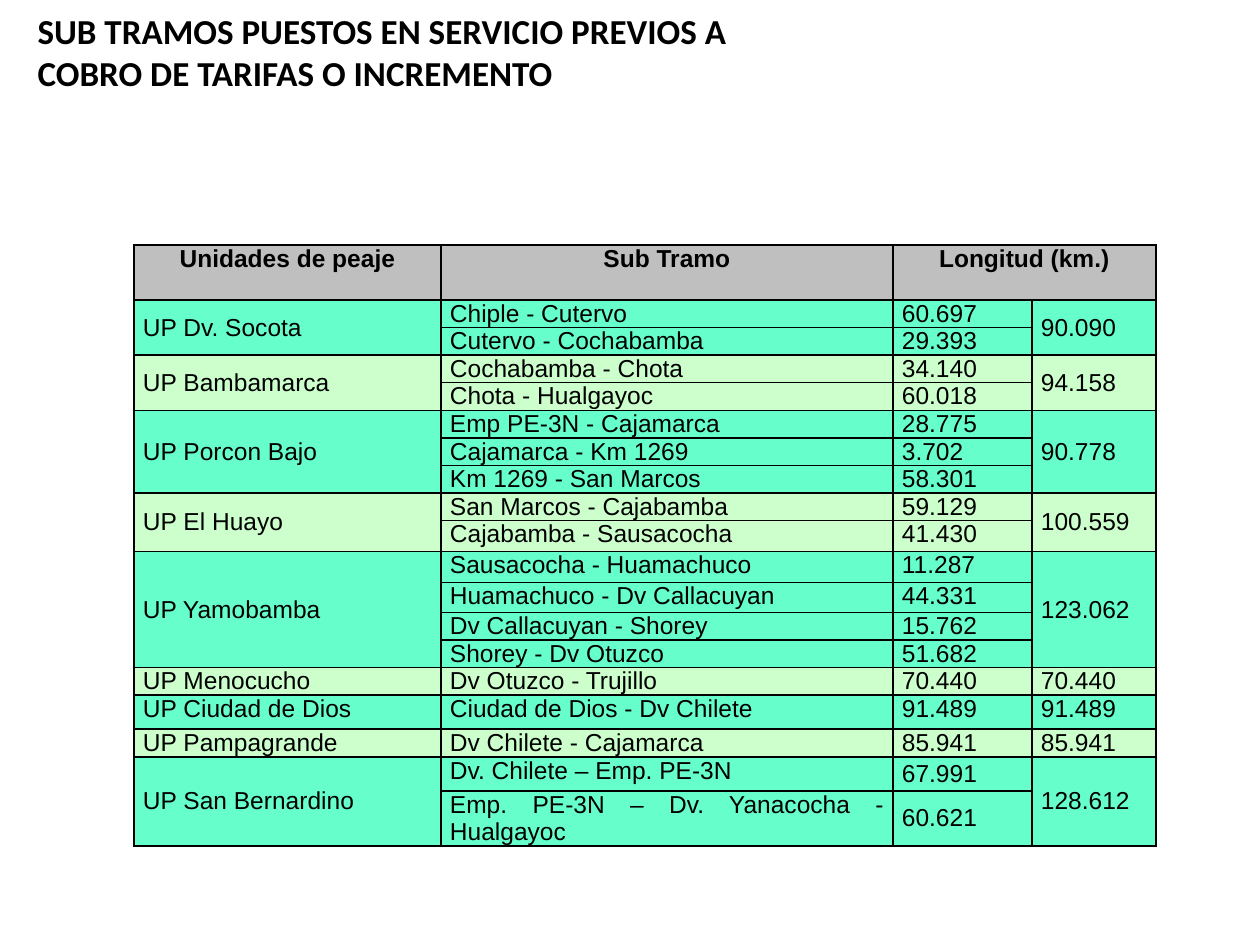
from lxml import etree
from pptx import Presentation
from pptx.dml.color import RGBColor
from pptx.enum.text import MSO_ANCHOR as Anchor, MSO_AUTO_SIZE as AutoSize, PP_ALIGN as Align
from pptx.oxml.ns import qn
from pptx.util import Emu, Pt

PX_PER_INCH = 126
BLACK = RGBColor(0x00, 0x00, 0x00)
GRAY = RGBColor(0xBF, 0xBF, 0xBF)
AQUA = RGBColor(0x66, 0xFF, 0xCC)
LIGHT_GREEN = RGBColor(0xCC, 0xFF, 0xCC)

TITLE = "SUB TRAMOS PUESTOS EN SERVICIO PREVIOS A COBRO DE TARIFAS O INCREMENTO"
HEADERS = ["Unidades de peaje", "Sub Tramo", "Longitud (km.)"]
TOLL_UNITS = [
    ("UP Dv. Socota", "90.090",
     [("Chiple - Cutervo", "60.697"), ("Cutervo - Cochabamba", "29.393")]),
    ("UP Bambamarca", "94.158",
     [("Cochabamba - Chota", "34.140"), ("Chota - Hualgayoc", "60.018")]),
    ("UP Porcon Bajo", "90.778",
     [("Emp PE-3N - Cajamarca", "28.775"), ("Cajamarca - Km 1269", "3.702"),
      ("Km 1269 - San Marcos", "58.301")]),
    ("UP El Huayo", "100.559",
     [("San Marcos - Cajabamba", "59.129"), ("Cajabamba - Sausacocha", "41.430")]),
    ("UP Yamobamba", "123.062",
     [("Sausacocha - Huamachuco", "11.287"), ("Huamachuco - Dv Callacuyan", "44.331"),
      ("Dv Callacuyan - Shorey", "15.762"), ("Shorey - Dv Otuzco", "51.682")]),
    ("UP Menocucho", "70.440", [("Dv Otuzco - Trujillo", "70.440")]),
    ("UP Ciudad de Dios", "91.489", [("Ciudad de Dios - Dv Chilete", "91.489")]),
    ("UP Pampagrande", "85.941", [("Dv Chilete - Cajamarca", "85.941")]),
    ("UP San Bernardino", "128.612",
     [("Dv. Chilete – Emp. PE-3N", "67.991"),
      ("Emp. PE-3N – Dv. Yanacocha - Hualgayoc", "60.621")]),
]
COLUMN_WIDTHS = [307, 452, 139, 124]
ROW_HEIGHTS = [55] + [27] * 8 + [31, 31, 30] + [27] * 3 + [34, 27, 34, 55]


def px(length):
    return Emu(round(length * 914400 / PX_PER_INCH))


def write_text(frame, text, size=14, font="Arial", bold=False, align=Align.LEFT):
    paragraph = frame.paragraphs[0]
    paragraph.text = text
    paragraph.alignment = align
    paragraph.font.size = Pt(size)
    paragraph.font.name = font
    paragraph.font.bold = bold
    paragraph.font.color.rgb = BLACK


def add_title(slide):
    title = slide.shapes.title
    title.left, title.top, title.width, title.height = px(25), px(3), px(725), px(97)
    frame = title.text_frame
    frame.word_wrap = True
    frame.auto_size = AutoSize.NONE
    frame.vertical_anchor = Anchor.TOP
    write_text(frame, TITLE, size=20, font="Calibri", bold=True)


def format_cell(cell, fill):
    """Give the cell black borders, a fill and tight margins."""
    properties = cell._tc.get_or_add_tcPr()
    for side in ("a:lnL", "a:lnR", "a:lnT", "a:lnB"):
        line = etree.SubElement(properties, qn(side), w=str(Pt(1)))
        solid = etree.SubElement(line, qn("a:solidFill"))
        etree.SubElement(solid, qn("a:srgbClr"), val=str(BLACK))
    cell.fill.solid()
    cell.fill.fore_color.rgb = fill
    cell.margin_left = cell.margin_right = px(9)
    cell.margin_top = cell.margin_bottom = 0


def write_cell(cell, text, middle=False, **text_format):
    cell.vertical_anchor = Anchor.MIDDLE if middle else Anchor.TOP
    write_text(cell.text_frame, text, **text_format)


def add_toll_unit(table, first, fill, name, total, sections):
    last = first + len(sections) - 1
    for row in range(first, last + 1):
        for column in range(len(COLUMN_WIDTHS)):
            format_cell(table.cell(row, column), fill)
    for column, text in ((0, name), (3, total)):
        cell = table.cell(first, column)
        if last > first:
            cell.merge(table.cell(last, column))
        write_cell(cell, text, middle=last > first)
    for row, (section, length) in enumerate(sections, first):
        write_cell(table.cell(row, 1), section, align=Align.JUSTIFY)
        write_cell(table.cell(row, 2), length, middle=name == "UP San Bernardino")


def add_toll_table(slide):
    table = slide.shapes.add_table(
        len(ROW_HEIGHTS), len(COLUMN_WIDTHS), px(134), px(245),
        px(sum(COLUMN_WIDTHS)), px(sum(ROW_HEIGHTS))).table
    table.first_row = table.horz_banding = False
    for column, width in zip(table.columns, COLUMN_WIDTHS):
        column.width = px(width)
    for row, height in zip(table.rows, ROW_HEIGHTS):
        row.height = px(height)

    for cell in table.rows[0].cells:
        format_cell(cell, GRAY)
    table.cell(0, 2).merge(table.cell(0, 3))
    for column, header in enumerate(HEADERS):
        write_cell(table.cell(0, column), header, bold=True, align=Align.CENTER)

    first = 1
    for index, (name, total, sections) in enumerate(TOLL_UNITS):
        fill = LIGHT_GREEN if index % 2 else AQUA
        add_toll_unit(table, first, fill, name, total, sections)
        first += len(sections)


def main():
    presentation = Presentation()
    presentation.slide_width, presentation.slide_height = px(1260), px(945)
    slide = presentation.slides.add_slide(presentation.slide_layouts[5])
    add_title(slide)
    add_toll_table(slide)
    presentation.save("out.pptx")


if __name__ == "__main__":
    main()
